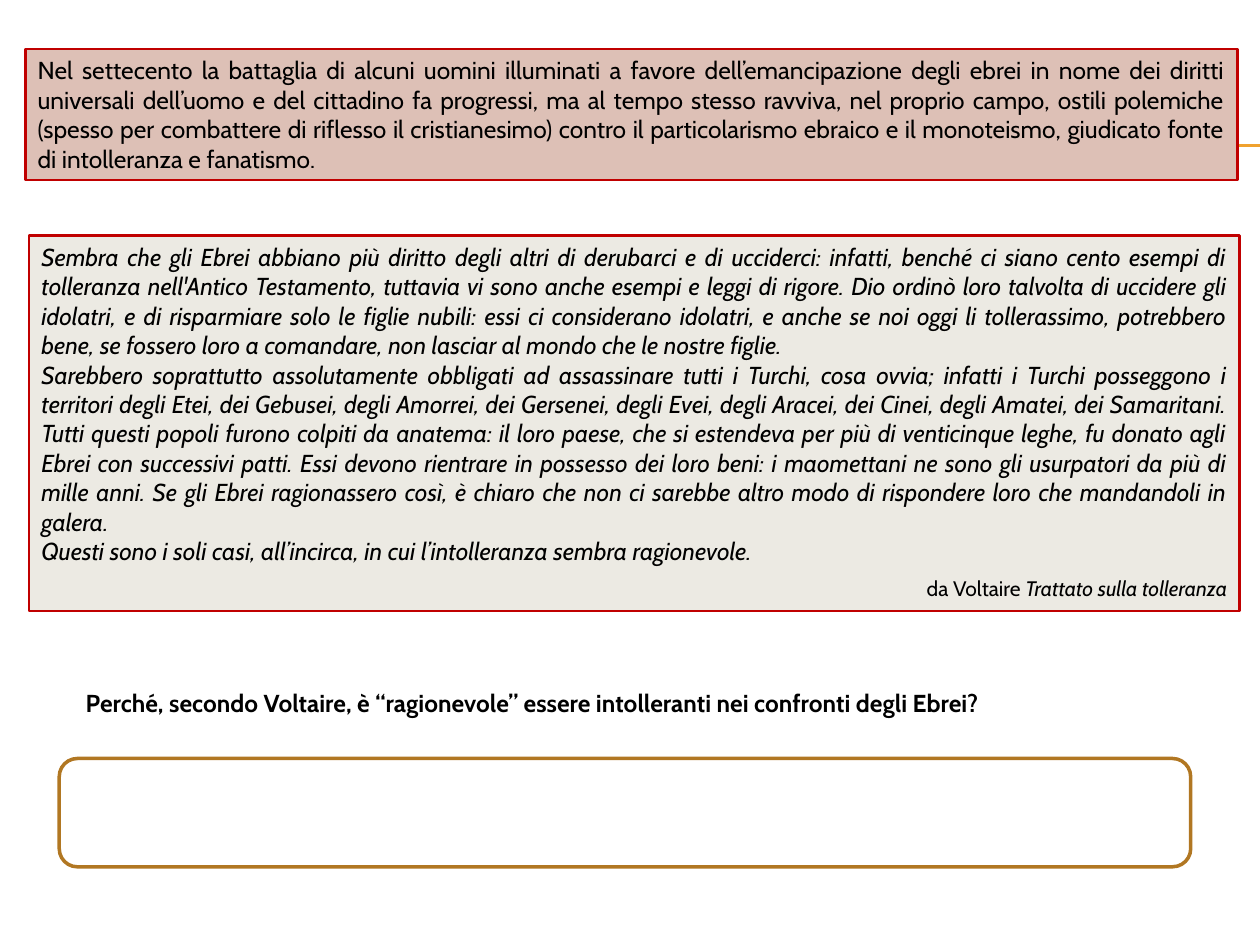
import pptx
import pptx.util
import pptx.dml.color
import pptx.enum.shapes
import pptx.enum.text
import lxml.etree
from dataclasses import dataclass

ALIGN = pptx.enum.text.PP_ALIGN
SHAPE = pptx.enum.shapes.MSO_SHAPE
COLS, ROWS = 100, 75  # grid cells of a tenth of an inch


@dataclass(frozen=True)
class Theme:
    font: str = "Cabin"
    body: int = 14
    small: int = 12
    ink: str = "000000"
    red: str = "C00000"
    rose: str = "DDC0B6"
    sand: str = "ECEAE3"
    white: str = "FFFFFF"
    gold: str = "F0A22E"
    brown: str = "B17722"


THEME = Theme()

INTRO = (
    "Nel settecento la battaglia di alcuni uomini illuminati a favore "
    "dell’emancipazione degli ebrei in nome dei diritti universali dell’uomo e del "
    "cittadino fa progressi, ma al tempo stesso ravviva, nel proprio campo, ostili "
    "polemiche (spesso per combattere di riflesso il cristianesimo) contro il "
    "particolarismo ebraico e il monoteismo, giudicato fonte di intolleranza e "
    "fanatismo."
)
QUOTE = [
    "Sembra che gli Ebrei abbiano più diritto degli altri di derubarci e di "
    "ucciderci: infatti, benché ci siano cento esempi di tolleranza nell'Antico "
    "Testamento, tuttavia vi sono anche esempi e leggi di rigore. Dio ordinò loro "
    "talvolta di uccidere gli idolatri, e di risparmiare solo le figlie nubili: essi "
    "ci considerano idolatri, e anche se noi oggi li tollerassimo, potrebbero bene, "
    "se fossero loro a comandare, non lasciar al mondo che le nostre figlie.",
    "Sarebbero soprattutto assolutamente obbligati ad assassinare tutti i Turchi, "
    "cosa ovvia; infatti i Turchi posseggono i territori degli Etei, dei Gebusei, "
    "degli Amorrei, dei Gersenei, degli Evei, degli Aracei, dei Cinei, degli Amatei, "
    "dei Samaritani. Tutti questi popoli furono colpiti da anatema: il loro paese, "
    "che si estendeva per più di venticinque leghe, fu donato agli Ebrei con "
    "successivi patti. Essi devono rientrare in possesso dei loro beni: "
    "i maomettani ne sono gli usurpatori da più di mille anni. Se gli Ebrei "
    "ragionassero così, è chiaro che non ci sarebbe altro modo di rispondere loro "
    "che mandandoli in galera.",
    "Questi sono i soli casi, all’incirca, in cui l’intolleranza sembra ragionevole.",
]
SOURCE = ("da Voltaire ", "Trattato sulla tolleranza")
ASK = "Perché, secondo Voltaire, è “ragionevole” essere intolleranti nei confronti degli Ebrei?"


def cells(count):
    return pptx.util.Inches(count / 10)


def color(code):
    return pptx.dml.color.RGBColor.from_string(code)


def style(run, size=THEME.body, bold=False, italic=False):
    font = run.font
    font.name, font.size = THEME.font, pptx.util.Pt(size)
    font.bold, font.italic = bold, italic
    font.color.rgb = color(THEME.ink)


def panel(slide, box, kind, fill, edge, width):
    shape = slide.shapes.add_shape(kind, *map(cells, box))
    shape.shadow.inherit = False
    shape.fill.solid()
    shape.fill.fore_color.rgb = color(fill)
    shape.line.color.rgb = color(edge)
    shape.line.width = pptx.util.Pt(width)
    return shape


def write(frame, texts, **look):
    """Fill a frame with justified paragraphs of one look."""
    frame.word_wrap = True
    frame.text = "\n".join(texts)
    for para in frame.paragraphs:
        para.alignment = ALIGN.JUSTIFY
        for run in para.runs:
            style(run, **look)


def rules(slide, box):
    """Draw the two thin lines at the top and bottom of the box."""
    left, top, width, height = box
    for row in (top, top + height):
        line = slide.shapes.add_connector(
            pptx.enum.shapes.MSO_CONNECTOR.STRAIGHT,
            cells(left), cells(row), cells(left + width), cells(row))
        line.line.color.rgb = color(THEME.gold)
        line.line.width = pptx.util.Pt(0.75)
        props = line._element.spPr
        lxml.etree.SubElement(props, pptx.oxml.ns.qn("a:effectLst"))


def intro(slide, box):
    shape = panel(slide, box, SHAPE.RECTANGLE, THEME.rose, THEME.red, 1.5)
    shape.text_frame.vertical_anchor = pptx.enum.text.MSO_ANCHOR.TOP
    write(shape.text_frame, [INTRO])


def quote(slide, box):
    shape = panel(slide, box, SHAPE.RECTANGLE, THEME.sand, THEME.red, 1.5)
    frame = shape.text_frame
    frame.vertical_anchor = pptx.enum.text.MSO_ANCHOR.TOP
    write(frame, QUOTE, italic=True)
    frame.paragraphs[-1].space_after = pptx.util.Pt(6)
    credit = frame.add_paragraph()
    credit.alignment = ALIGN.RIGHT
    credit.space_after = pptx.util.Pt(6)
    for text, slant in zip(SOURCE, (False, True)):
        run = credit.add_run()
        run.text = text
        style(run, size=THEME.small, italic=slant)


def question(slide, box):
    title = slide.shapes.title
    title.left, title.top, title.width, title.height = map(cells, box)
    frame = title.text_frame
    frame.auto_size = pptx.enum.text.MSO_AUTO_SIZE.NONE
    frame.vertical_anchor = pptx.enum.text.MSO_ANCHOR.MIDDLE
    write(frame, [ASK], bold=True)


def answer(slide, box):
    panel(slide, box, SHAPE.ROUNDED_RECTANGLE, THEME.white, THEME.brown, 2)


def main():
    deck = pptx.Presentation()
    deck.slide_width, deck.slide_height = cells(COLS), cells(ROWS)
    slide = deck.slides.add_slide(deck.slide_layouts.get_by_name("Title Only"))
    rules(slide, (5.6, 11.5, COLS - 5.6, 0.1))
    quote(slide, (2.3, 18.7, 96.1, 29.8))
    question(slide, (5.8, 52.3, 89, 7))
    answer(slide, (4.7, 60.2, 89.8, 8.6))
    intro(slide, (2, 3.9, 96.2, 10.4))
    deck.save("out.pptx")


if __name__ == "__main__":
    main()
